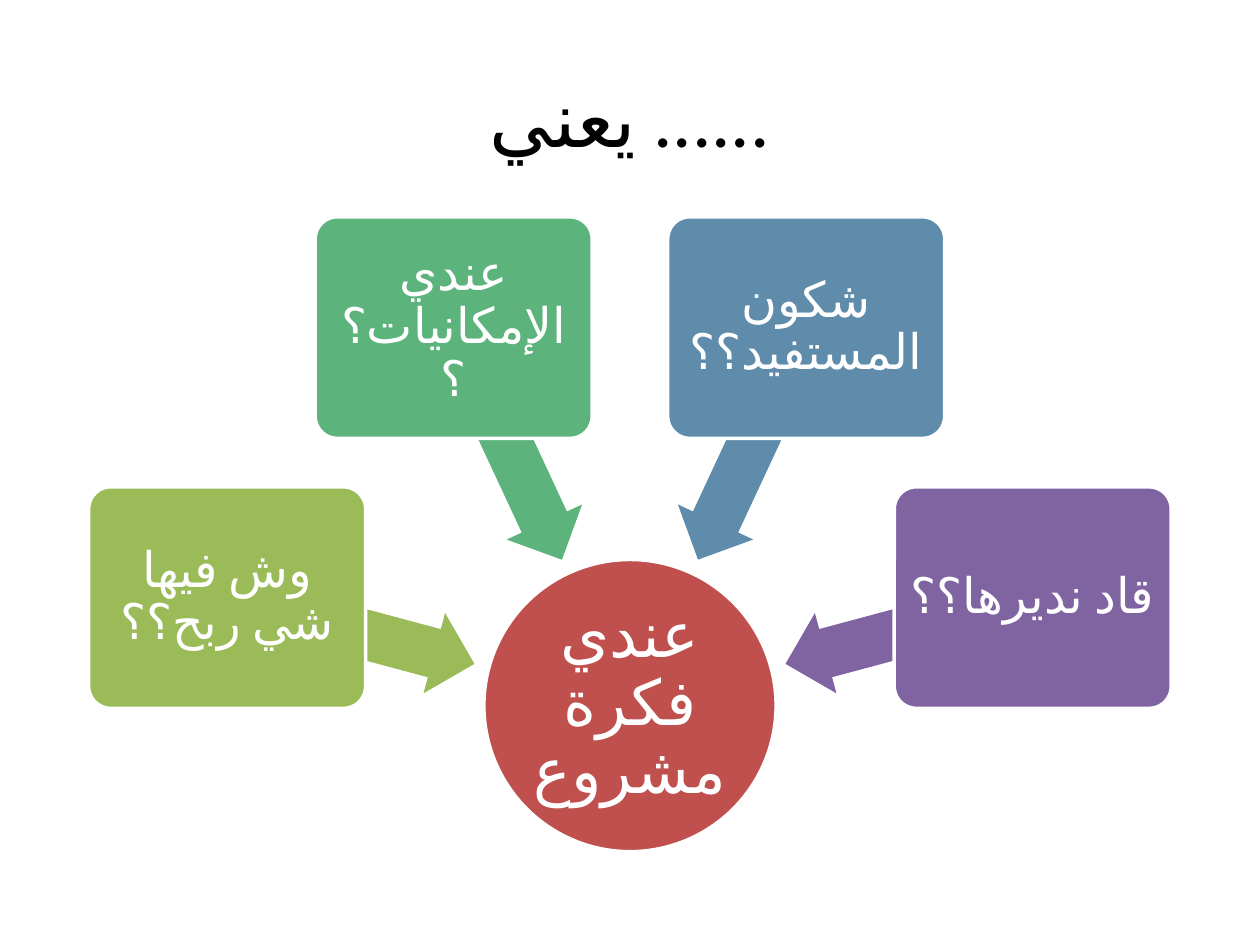
from math import cos, radians, sin

from lxml.etree import SubElement
from pptx import Presentation
from pptx.dml.color import RGBColor
from pptx.enum.shapes import MSO_SHAPE as SHAPE
from pptx.enum.text import MSO_ANCHOR as ANCHOR, PP_ALIGN as ALIGN
from pptx.oxml.ns import qn
from pptx.util import Pt

FONT = "Calibri"
BLACK = RGBColor(0x00, 0x00, 0x00)
WHITE = RGBColor(0xFF, 0xFF, 0xFF)
RED = RGBColor(0xC0, 0x50, 0x4D)
LIME = RGBColor(0x9B, 0xBB, 0x59)
GREEN = RGBColor(0x5C, 0xB3, 0x7C)
BLUE = RGBColor(0x60, 0x8C, 0xAB)
PURPLE = RGBColor(0x80, 0x64, 0xA2)

# Radial layout around the idea circle, in points and degrees
HUB_X, HUB_Y, HUB_SIZE = 360, 403.2, 167
BOX_RADIUS, BOX_W, BOX_H = 238.3, 158.3, 126.6
ARROW_RADIUS, ARROW_W, ARROW_H = 165, 146, 47.5
FIRST_ANGLE, ANGLE_STEP = 195, 50

QUESTIONS = [
    ("وش فيها شي ربح؟؟", LIME),
    ("عندي الإمكانيات؟؟", GREEN),
    ("شكون المستفيد؟؟", BLUE),
    ("قاد نديرها؟؟", PURPLE),
]


def set_arabic(p):
    """Give the paragraph its complex-script font and language."""
    props = p._p.get_or_add_pPr().get_or_add_defRPr()
    props.set("lang", "ar-DZ")
    SubElement(props, qn("a:cs")).set("typeface", FONT)


def write(sp, text, size, color, inset=None, spacing=None):
    tf = sp.text_frame
    tf.word_wrap = True
    tf.vertical_anchor = ANCHOR.MIDDLE
    if inset is not None:
        tf.margin_left = tf.margin_right = Pt(inset)
        tf.margin_top = tf.margin_bottom = Pt(inset)
    p = tf.paragraphs[0]
    p.text = text
    p.alignment = ALIGN.CENTER
    p.line_spacing = spacing
    p.font.name = FONT
    p.font.size = Pt(size)
    p.font.color.rgb = color
    set_arabic(p)


def add_centred(s, kind, x, y, w, h, color):
    sp = s.shapes.add_shape(kind, Pt(x - w / 2), Pt(y - h / 2), Pt(w), Pt(h))
    sp.shadow.inherit = False
    sp.fill.solid()
    sp.fill.fore_color.rgb = color
    sp.line.fill.background()
    return sp


def outline(sp):
    sp.line.color.rgb = WHITE
    sp.line.width = Pt(2)


def around_hub(radius, angle):
    a = radians(angle)
    return HUB_X + radius * cos(a), HUB_Y + radius * sin(a)


def add_title(s, text):
    sp = s.shapes.add_textbox(Pt(36), Pt(21.6), Pt(648), Pt(90))
    write(sp, text, 44, BLACK)


def add_hub(s, text):
    sp = add_centred(s, SHAPE.OVAL, HUB_X, HUB_Y, HUB_SIZE, HUB_SIZE, RED)
    outline(sp)
    write(sp, text, 36, WHITE, inset=2, spacing=0.9)


def add_arrow(s, angle, color):
    x, y = around_hub(ARROW_RADIUS, angle)
    sp = add_centred(s, SHAPE.LEFT_ARROW, x, y, ARROW_W, ARROW_H, color)
    sp.adjustments[0] = 0.6
    sp.adjustments[1] = 0.5
    sp.rotation = angle


def add_question(s, angle, text, color):
    x, y = around_hub(BOX_RADIUS, angle)
    sp = add_centred(s, SHAPE.ROUNDED_RECTANGLE, x, y, BOX_W, BOX_H, color)
    sp.adjustments[0] = 0.1
    outline(sp)
    write(sp, text, 28, WHITE, inset=4.2, spacing=0.9)


def main():
    prs = Presentation()
    prs.slide_width, prs.slide_height = Pt(720), Pt(540)
    s = prs.slides.add_slide(prs.slide_layouts[6])

    add_title(s, "يعني ......")
    add_hub(s, "عندي فكرة مشروع")

    # Each question box sits over the tail of its arrow
    for i, (text, color) in enumerate(QUESTIONS):
        angle = FIRST_ANGLE + i * ANGLE_STEP
        add_arrow(s, angle, color)
        add_question(s, angle, text, color)

    prs.save("out.pptx")


if __name__ == "__main__":
    main()
